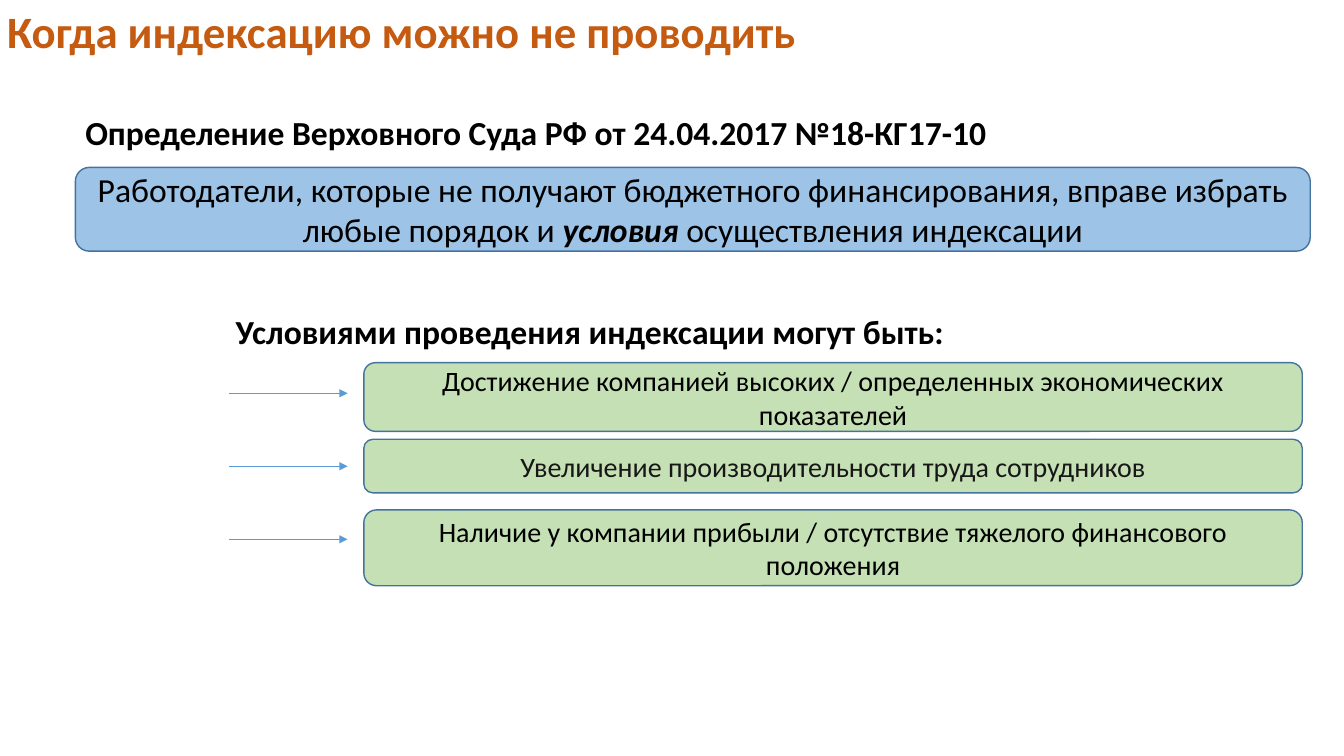
from lxml import etree
from pptx import Presentation
from pptx import util as u
from pptx.dml.color import RGBColor
from pptx.enum import shapes, text
from pptx.oxml import ns

ORANGE = RGBColor(0xC5, 0x5A, 0x11)
BLACK = RGBColor(0x00, 0x00, 0x00)
DARK = RGBColor(0x18, 0x17, 0x17)
BLUE = RGBColor(0x9D, 0xC3, 0xE6)
GREEN = RGBColor(0xC5, 0xE0, 0xB4)
OUTLINE = RGBColor(0x43, 0x73, 0x9E)
ARROW = RGBColor(0x5B, 0x9B, 0xD5)


def add_run(p, content, size=24, color=BLACK, bold=False, italic=False):
    """Append a formatted run to a paragraph."""
    r = p.add_run()
    r.text = content
    r.font.name = "Calibri"
    r.font.size = u.Pt(size)
    r.font.color.rgb = color
    r.font.bold = bold
    r.font.italic = italic


def add_box(left, top, width, height, fill):
    """Draw a rounded box and return its centred paragraph."""
    sp = s.shapes.add_shape(shapes.MSO_SHAPE.ROUNDED_RECTANGLE,
                            u.Cm(left), u.Cm(top), u.Cm(width), u.Cm(height))
    sp.shadow.inherit = False
    sp.fill.solid()
    sp.fill.fore_color.rgb = fill
    sp.line.color.rgb = OUTLINE
    sp.line.width = u.Pt(1)
    tf = sp.text_frame
    tf.word_wrap = True
    tf.vertical_anchor = text.MSO_ANCHOR.MIDDLE
    p = tf.paragraphs[0]
    p.alignment = text.PP_ALIGN.CENTER
    return p


prs = Presentation()
prs.slide_width, prs.slide_height = u.Cm(33.87), u.Cm(19.05)
s = prs.slides.add_slide(prs.slide_layouts[6])

# Title
sp = s.shapes.add_textbox(0, 0, prs.slide_width, u.Cm(1.75))
tf = sp.text_frame
tf.word_wrap = True
tf.margin_left = tf.margin_right = u.Cm(0.18)
tf.margin_top = tf.margin_bottom = u.Cm(0.1)
add_run(tf.paragraphs[0], "Когда индексацию можно не проводить",
        size=32, color=ORANGE, bold=True)

# Section headings
headings = [
    (1.9, 2.7, 23.42, "Определение Верховного Суда РФ от 24.04.2017 №18-КГ17-10"),
    (5.69, 7.7, 18.54, "Условиями проведения индексации могут быть:"),
]
for left, top, width, heading in headings:
    sp = s.shapes.add_textbox(u.Cm(left), u.Cm(top), u.Cm(width), u.Cm(1.27))
    tf = sp.text_frame
    tf.word_wrap = False
    tf.auto_size = text.MSO_AUTO_SIZE.SHAPE_TO_FIT_TEXT
    add_run(tf.paragraphs[0], heading, bold=True)

# Court ruling
p = add_box(1.9, 4.22, 31.12, 2.11, BLUE)
add_run(p, "Работодатели, которые не получают бюджетного финансирования, "
           "вправе избрать любые порядок и")
add_run(p, " условия ", bold=True, italic=True)
add_run(p, "осуществления индексации")

# Conditions, each with an arrow pointing at it
conditions = [
    (9.14, 1.73, BLACK,
     "Достижение компанией высоких / определенных экономических показателей"),
    (11.07, 1.35, DARK, "Увеличение производительности труда сотрудников"),
    (12.85, 1.91, BLACK,
     "Наличие у компании прибыли / отсутствие тяжелого финансового положения"),
]
for i, (top, height, color, condition) in enumerate(conditions):
    p = add_box(9.17, top, 23.65, height, GREEN)
    add_run(p, condition, size=20, color=color)

    y = u.Cm(9.91 + 1.84 * i)
    arrow = s.shapes.add_connector(shapes.MSO_CONNECTOR.STRAIGHT,
                                   u.Cm(5.77), y, u.Cm(8.76), y)
    arrow.line.color.rgb = ARROW
    arrow.line.width = u.Pt(0.5)
    etree.SubElement(arrow.line._get_or_add_ln(), ns.qn("a:tailEnd"), type="triangle")
    etree.SubElement(arrow._element.spPr, ns.qn("a:effectLst"))

prs.save("out.pptx")
